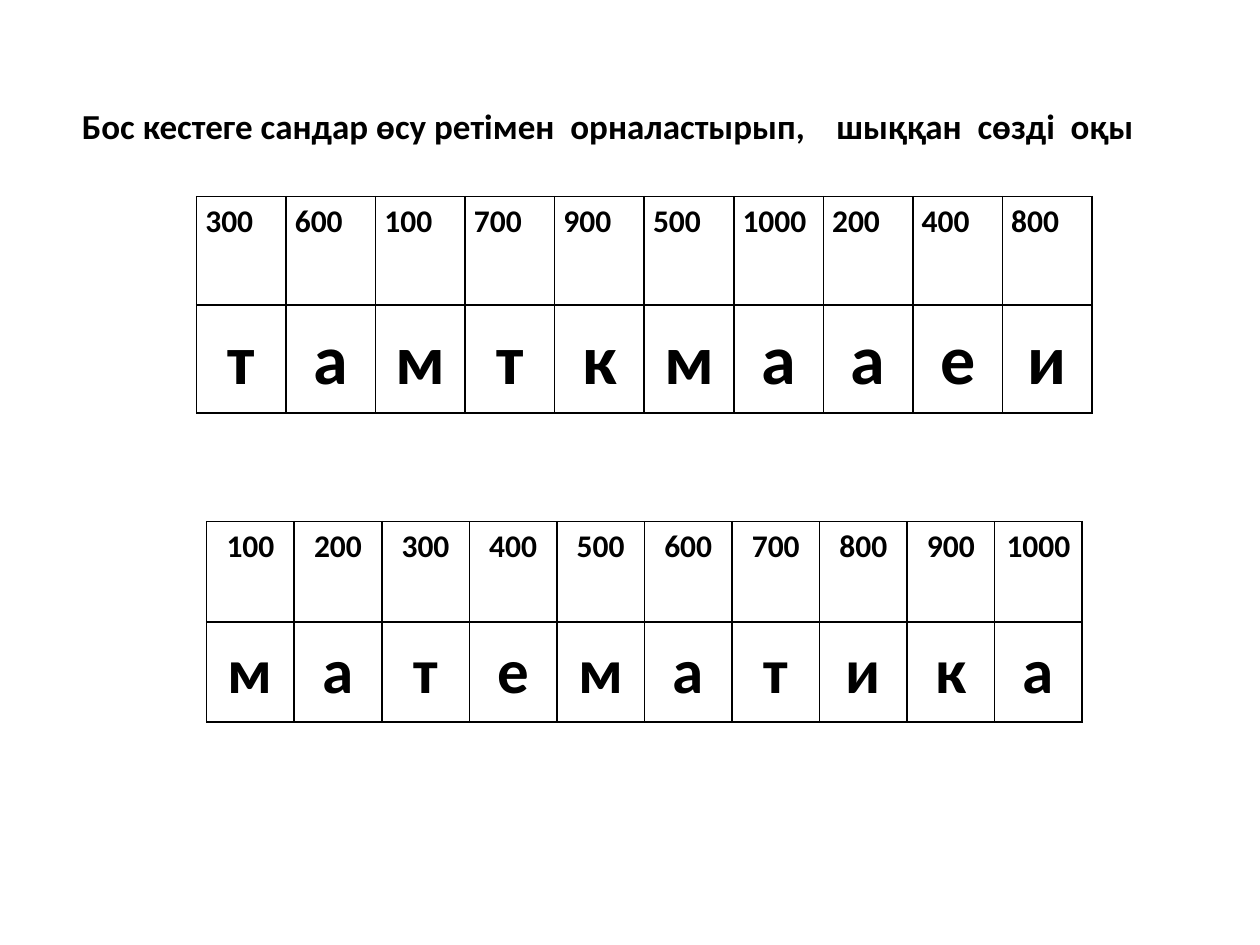
from lxml import etree
from pptx import Presentation
from pptx import util as u
from pptx.dml.color import RGBColor
from pptx.enum import text
from pptx.oxml.ns import qn

COLORS = {"ink": "000000", "paper": "FFFFFF"}
LEFT, CENTER = text.PP_ALIGN.LEFT, text.PP_ALIGN.CENTER


def write(frame, words, size, align=LEFT, spacing=1.0, font="Calibri"):
    """Put one bold paragraph into a text frame."""
    frame.text = words
    line = frame.paragraphs[0]
    line.alignment = align
    line.line_spacing = spacing
    line.space_before = u.Pt(0)
    style = line.runs[0].font
    style.name, style.size, style.bold = font, u.Pt(size), True
    style.color.rgb = RGBColor.from_string(COLORS["ink"])


class Worksheet:
    """Style and current slide; places are shares of the slide's size."""
    border = u.Pt(1)
    side_margin = u.Inches(0.07)

    def __init__(self, width, height):
        self.deck = Presentation()
        self.deck.slide_width, self.deck.slide_height = u.Inches(width), u.Inches(height)
        self.slide = self.deck.slides.add_slide(self.deck.slide_layouts[5])
        paper = self.slide.background.fill
        paper.solid()
        paper.fore_color.rgb = RGBColor.from_string(COLORS["paper"])

    def place(self, left, top, width, height):
        across, down = self.deck.slide_width, self.deck.slide_height
        return [round(share * side) for share, side in
                zip((left, top, width, height), (across, down, across, down))]

    def title(self, words, box, size):
        heading = self.slide.shapes.title
        heading.left, heading.top, heading.width, heading.height = self.place(*box)
        frame = heading.text_frame
        frame.word_wrap = False
        frame.auto_size = text.MSO_AUTO_SIZE.NONE
        frame.vertical_anchor = text.MSO_ANCHOR.TOP
        write(frame, words, size)

    def letter_grid(self, pairs, box, letter_size, number_align=CENTER):
        """Numbers in the first row, their letters in the second."""
        left, top, width, height = self.place(*box)
        grid = self.slide.shapes.add_table(2, len(pairs), left, top, width, height).table
        grid.first_row = grid.horz_banding = False
        for column, (number, letter) in enumerate(pairs):
            self.cell(grid.cell(0, column), str(number), 18, number_align)
            self.cell(grid.cell(1, column), letter, letter_size, CENTER)

    def cell(self, cell, words, size, align):
        cell.margin_left = cell.margin_right = self.side_margin
        cell.margin_top = cell.margin_bottom = 0
        write(cell.text_frame, words, size, align, spacing=1.15)
        cell.fill.background()
        # Borders come before the fill in the cell properties
        props = cell._tc.get_or_add_tcPr()
        for order, edge in enumerate(("a:lnL", "a:lnR", "a:lnT", "a:lnB")):
            line = etree.Element(qn(edge), w=str(self.border))
            solid = etree.SubElement(line, qn("a:solidFill"))
            etree.SubElement(solid, qn("a:srgbClr"), val=COLORS["ink"])
            props.insert(order, line)


def main():
    sheet = Worksheet(10, 7.5)

    # Task
    sheet.title("Бос кестеге сандар өсу ретімен  орналастырып,    шыққан  сөзді  оқы",
                (0.055, 0.78 / 7.5, 0.862, 0.84 / 7.5), 20)

    # Shuffled numbers with their letters
    shuffled = list(zip((300, 600, 100, 700, 900, 500, 1000, 200, 400, 800), "тамткмааеи"))
    sheet.letter_grid(shuffled, (0.156, 1.56 / 7.5, 0.711, 1.72 / 7.5), 40, number_align=LEFT)

    # Answer: ascending numbers spell the word
    sheet.letter_grid(sorted(shuffled), (0.164, 4.14 / 7.5, 0.695, 1.59 / 7.5), 36)

    sheet.deck.save("out.pptx")


if __name__ == "__main__":
    main()
